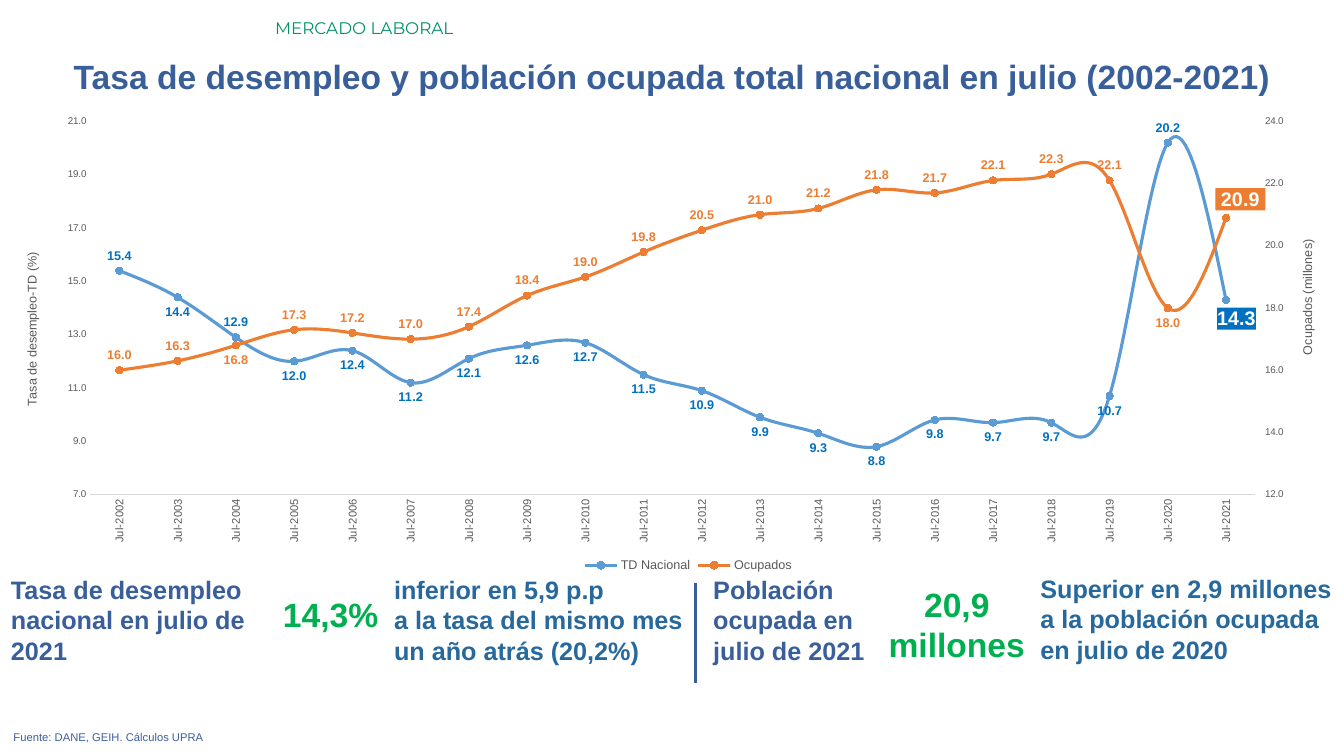
import copy

import pptx
import pptx.chart.axis
import pptx.chart.data
import pptx.dml.color
import pptx.enum.chart
import pptx.enum.shapes
import pptx.enum.text
import pptx.oxml
import pptx.oxml.ns
import pptx.util

RGB = pptx.dml.color.RGBColor
Pt = pptx.util.Pt
qn = pptx.oxml.ns.qn
ALIGN = pptx.enum.text.PP_ALIGN
POS = pptx.enum.chart.XL_LABEL_POSITION
TICK = pptx.enum.chart.XL_TICK_MARK

NAVY = RGB(0x39, 0x5F, 0x9B)
TEAL = RGB(0x27, 0x68, 0x9D)
GREEN = RGB(0x00, 0xB0, 0x50)
HEADER = RGB(0x00, 0x92, 0x67)
GRAY = RGB(0x59, 0x59, 0x59)
RULE = RGB(0xD9, 0xD9, 0xD9)
BLUE = RGB(0x5B, 0x9B, 0xD5)
LABEL_BLUE = RGB(0x00, 0x70, 0xC0)
ORANGE = RGB(0xED, 0x7D, 0x31)
WHITE = RGB(0xFF, 0xFF, 0xFF)

prs = pptx.Presentation()
prs.slide_width = pptx.util.Inches(13.33)
prs.slide_height = pptx.util.Inches(7.5)
COL = prs.slide_width / 100
ROW = prs.slide_height / 100
s = prs.slides.add_slide(prs.slide_layouts[6])


def add_text(text, x, y, w, h, size=18, color=NAVY, bold=True, font="Arial", align=ALIGN.LEFT):
    box = s.shapes.add_textbox(int(x * COL), int(y * ROW), int(w * COL), int(h * ROW))
    tf = box.text_frame
    tf.word_wrap = True
    for i, line in enumerate(text.split("\n")):
        p = tf.add_paragraph() if i else tf.paragraphs[0]
        p.alignment = align
        r = p.add_run()
        r.text = line
        r.font.size = Pt(size)
        r.font.name = font
        r.font.bold = bold
        r.font.color.rgb = color


def set_layout(parent, index, modes="", **shares):
    for old in parent.findall(qn("c:layout")):
        parent.remove(old)
    values = "".join(f'<c:{k} val="{v}"/>' for k, v in shares.items())
    parent.insert(index, pptx.oxml.parse_xml(
        f'<c:layout {pptx.oxml.ns.nsdecls("c")}><c:manualLayout>{modes}{values}</c:manualLayout></c:layout>'))


EDGE = '<c:xMode val="edge"/><c:yMode val="edge"/>'

add_text("MERCADO LABORAL", 19.73, 1.73, 80.27, 4, size=12, color=HEADER, bold=False, font="Montserrat")
add_text("Tasa de desempleo y población ocupada total nacional en julio (2002-2021)",
         0, 6.67, 100, 6.67, size=24, align=ALIGN.CENTER)
add_text("Tasa de desempleo nacional en julio de 2021", 0.08, 75.33, 21.3, 13.47)
add_text("14,3%", 19.73, 77.87, 9.15, 6.67, size=24, color=GREEN, align=ALIGN.RIGHT)
add_text("inferior en 5,9 p.p\na la tasa del mismo mes un año atrás (20,2%)", 28.58, 75.33, 23.2, 13.47, color=TEAL)
add_text("Población ocupada en julio de 2021", 52.33, 75.33, 13.73, 13.47)
add_text("20,9 millones", 65.19, 76.53, 12, 12.13, size=24, color=GREEN, align=ALIGN.CENTER)
add_text("Superior en 2,9 millones a la población ocupada en julio de 2020", 76.67, 75.2, 23.33, 13.47, color=TEAL)
add_text("Fuente: DANE, GEIH. Cálculos UPRA", 0.27, 95.93, 96.85, 3.2, size=8, bold=False, align=ALIGN.JUSTIFY)

divider = s.shapes.add_connector(pptx.enum.shapes.MSO_CONNECTOR.STRAIGHT,
                                 int(51.72 * COL), int(77.15 * ROW), int(51.72 * COL), int(90.4 * ROW))
divider.line.color.rgb = NAVY
divider.line.width = Pt(2.25)
divider.element.spPr.append(pptx.oxml.parse_xml(f'<a:effectLst {pptx.oxml.ns.nsdecls("a")}/>'))

data = pptx.chart.data.CategoryChartData(number_format="0.0")
data.categories = [f"Jul-{year}" for year in range(2002, 2022)]
data.add_series("TD Nacional", [15.4, 14.4, 12.9, 12, 12.4, 11.2, 12.1, 12.6, 12.7, 11.5,
                                10.9, 9.9, 9.3, 8.8, 9.8, 9.7, 9.7, 10.7, 20.2, 14.3])
data.add_series("Ocupados", [16, 16.3, 16.8, 17.3, 17.2, 17, 17.4, 18.4, 19, 19.8,
                             20.5, 21, 21.2, 21.8, 21.7, 22.1, 22.3, 22.1, 18, 20.9])
chart = s.shapes.add_chart(pptx.enum.chart.XL_CHART_TYPE.LINE_MARKERS, int(1.58 * COL), int(14.13 * ROW),
                           int(96.85 * COL), int(62.27 * ROW), data).chart
chart.has_title = False
chart.font.size = Pt(10)
chart.font.name = "Arial"
chart.font.color.rgb = GRAY
chart.has_legend = True
chart.legend.position = pptx.enum.chart.XL_LEGEND_POSITION.BOTTOM
chart.legend.include_in_layout = False
chart.legend.font.size = Pt(9)
chart.legend.font.name = "Arial"
chart.legend.font.color.rgb = GRAY
set_layout(chart.element.find(".//" + qn("c:legend")), 1, EDGE, x=0.43, y=0.95)
chart.plots[0].vary_by_categories = False

plot_area = chart.element.find(".//" + qn("c:plotArea"))
set_layout(plot_area, 0, '<c:layoutTarget val="inner"/>' + EDGE, x=0.053, y=0.031, w=0.895, h=0.793)
left_line = plot_area.find(qn("c:lineChart"))
left_cat = plot_area.find(qn("c:catAx"))
left_val = plot_area.find(qn("c:valAx"))
right_line, right_cat, right_val = [copy.deepcopy(e) for e in (left_line, left_cat, left_val)]
left_line.remove(left_line.findall(qn("c:ser"))[1])
right_line.remove(right_line.findall(qn("c:ser"))[0])
for axis_id, e in zip(("5001", "5002"), right_line.findall(qn("c:axId"))):
    e.set("val", axis_id)
for e, own, other in ((right_cat, "5001", "5002"), (right_val, "5002", "5001")):
    e.find(qn("c:axId")).set("val", own)
    e.find(qn("c:crossAx")).set("val", other)
right_val.find(qn("c:axPos")).set("val", "r")
right_val.find(qn("c:crosses")).set("val", "max")
left_line.addnext(right_line)
left_val.addnext(right_val)
right_val.addnext(right_cat)
pptx.chart.axis.CategoryAxis(right_cat).visible = False

cat = chart.category_axis
cat.major_tick_mark = TICK.NONE
cat.format.line.color.rgb = RULE
cat.format.line.width = Pt(0.75)
cat.tick_labels.font.size = Pt(8)
cat.tick_labels.font.name = "Arial"
cat.tick_labels.font.color.rgb = GRAY
left_cat.find(qn("c:txPr")).find(qn("a:bodyPr")).set("rot", "-5400000")

for e, title, low, high, tick, x, y in (
    (left_val, "Tasa de desempleo-TD (%)", 7, 21, TICK.NONE, 0, 0.304),
    (right_val, "Ocupados (millones)", 12, 24, TICK.OUTSIDE, 0.98, 0.277),
):
    axis = pptx.chart.axis.ValueAxis(e)
    axis.has_major_gridlines = False
    axis.minimum_scale = low
    axis.maximum_scale = high
    axis.major_unit = 2
    axis.major_tick_mark = tick
    axis.format.line.fill.background()
    axis.tick_labels.number_format = "0.0"
    axis.tick_labels.number_format_is_linked = False
    axis.tick_labels.font.size = Pt(7)
    axis.tick_labels.font.name = "Arial"
    axis.tick_labels.font.color.rgb = GRAY
    tf = axis.axis_title.text_frame
    r = tf.paragraphs[0].add_run()
    r.text = title
    r.font.size = Pt(9)
    r.font.name = "Arial"
    r.font.bold = False
    r.font.color.rgb = GRAY
    title_element = e.find(qn("c:title"))
    title_element.find(".//" + qn("a:bodyPr")).set("rot", "-5400000")
    set_layout(title_element, 1, EDGE, x=x, y=y)

ACCOUNTING = '_-* #,##0.0_-;\\-* #,##0.0_-;_-* "-"??_-;'
for plot, color, label_color, fmt, pos, exceptions, shift in (
    (chart.plots[0], BLUE, LABEL_BLUE, "#,##0.0", POS.BELOW,
     {0: POS.ABOVE, 2: POS.ABOVE, 18: POS.ABOVE, 19: POS.BELOW}, 0.008),
    (chart.plots[1], ORANGE, ORANGE, ACCOUNTING, POS.ABOVE,
     {2: POS.BELOW, 18: POS.BELOW, 19: POS.ABOVE}, 0.011),
):
    ser = plot.series[0]
    ser.smooth = True
    ser.format.line.color.rgb = color
    ser.format.line.width = Pt(2.25)
    ser.marker.style = pptx.enum.chart.XL_MARKER_STYLE.CIRCLE
    ser.marker.size = 5
    ser.marker.format.fill.solid()
    ser.marker.format.fill.fore_color.rgb = color
    ser.marker.format.line.color.rgb = color
    labels = ser.data_labels
    labels.show_value = True
    labels.number_format = fmt
    labels.number_format_is_linked = False
    labels.position = pos
    labels.font.size = Pt(9)
    labels.font.name = "Arial"
    labels.font.bold = True
    labels.font.color.rgb = label_color
    for i, point_pos in exceptions.items():
        last = i == 19
        label = ser.points[i].data_label
        label.position = point_pos
        label.font.size = Pt(14 if last else 9)
        label.font.name = "Arial"
        label.font.bold = True
        label.font.color.rgb = WHITE if last else label_color
    for e in labels._element.findall(qn("c:dLbl")):
        for old in e.findall(qn("c:spPr")):
            e.remove(old)
        num_fmt = pptx.oxml.parse_xml(f'<c:numFmt {pptx.oxml.ns.nsdecls("c")} formatCode="" sourceLinked="0"/>')
        num_fmt.set("formatCode", fmt)
        e.insert(1, num_fmt)
        if e.find(qn("c:idx")).get("val") == "19":
            e.insert(2, pptx.oxml.parse_xml(
                f'<c:spPr {pptx.oxml.ns.nsdecls("c", "a")}><a:solidFill><a:srgbClr val="{label_color}"/>'
                '</a:solidFill></c:spPr>'))
            set_layout(e, 1, x=shift, y=0)

prs.save("out.pptx")
